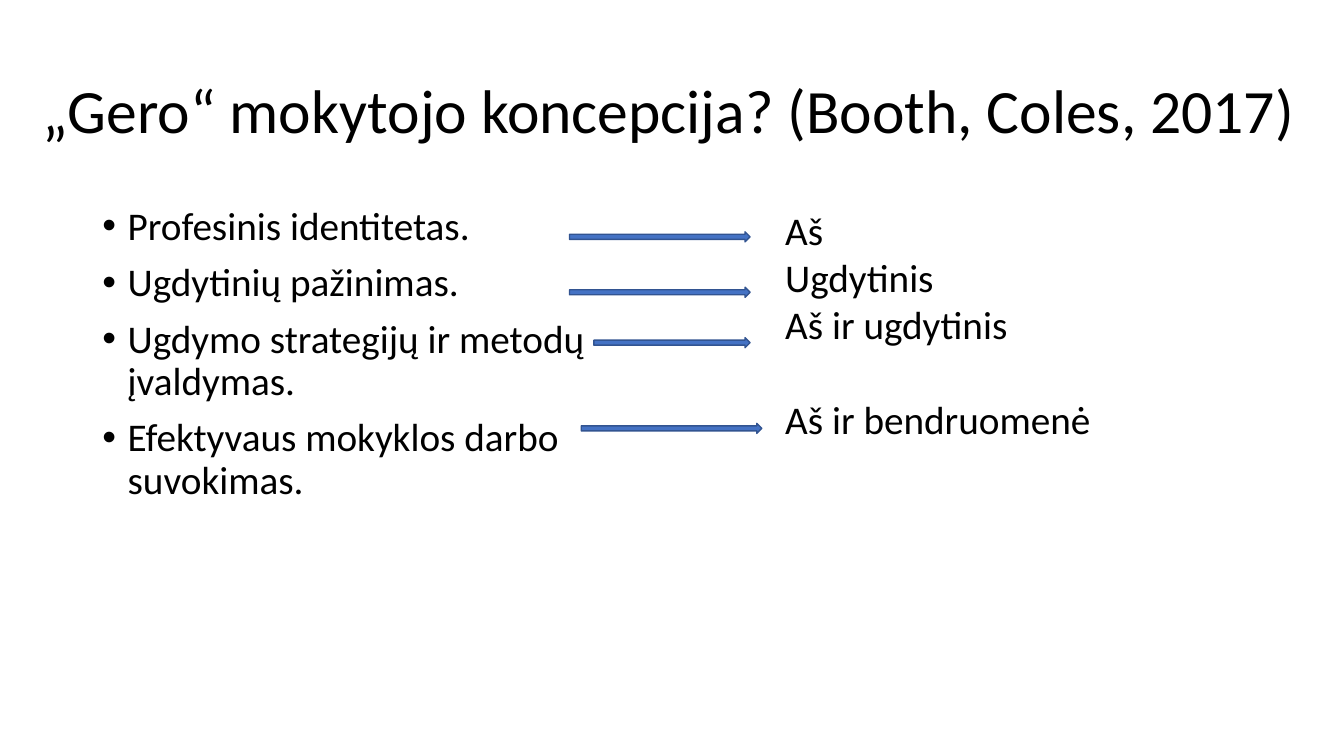
from pptx import Presentation
from pptx.dml.color import RGBColor
from pptx.enum.shapes import MSO_SHAPE
from pptx.enum.text import MSO_ANCHOR, MSO_AUTO_SIZE, PP_ALIGN
from pptx.util import Inches, Pt

BLACK = RGBColor(0, 0, 0)
BLUE = RGBColor(0x44, 0x72, 0xC4)
NAVY = RGBColor(0x32, 0x54, 0x91)

WIDTH, HEIGHT = Inches(13.33), Inches(7.5)
COLS, ROWS = 160, 90

TITLE = "„Gero“ mokytojo koncepcija? (Booth, Coles, 2017)"
SKILLS = [
    "Profesinis identitetas.",
    "Ugdytinių pažinimas.",
    "Ugdymo strategijų ir metodų įvaldymas.",
    "Efektyvaus mokyklos darbo suvokimas.",
]
ROLES = [("Aš", 0), ("Ugdytinis", 0), ("Aš ir ugdytinis", 0), ("Aš ir bendruomenė", 34)]
ARROWS = [(0, 0, 21.5), (0, 6.6, 21.5), (2.9, 12.6, 18.6), (1.4, 22.8, 21.5)]

FONT = {"name": "Calibri", "size": Pt(28)}
FRAME = {"word_wrap": True, "auto_size": MSO_AUTO_SIZE.NONE, "vertical_anchor": MSO_ANCHOR.TOP}
LIST = {"line_spacing": 0.9, "space_before": Pt(10)}


def style(item, values):
    for key, value in values.items():
        setattr(item, key, value)


def grid(box):
    left, top, width, height = box
    col, row = WIDTH / COLS, HEIGHT / ROWS
    return [round(n) for n in (left * col, top * row, width * col, height * row)]


def place(shape, box):
    style(shape, dict(zip(("left", "top", "width", "height"), grid(box))))


def write(frame, lines, form):
    style(frame, FRAME)
    for i, (text, extra) in enumerate(lines):
        para = frame.paragraphs[0] if i == 0 else frame.add_paragraph()
        para.text = text
        style(para, {**form, **extra})
        font = para.runs[0].font
        style(font, FONT)
        font.color.rgb = BLACK


def title(slide, box):
    shape = slide.shapes.title
    place(shape, box)
    write(shape.text_frame, [(TITLE, {})], {"line_spacing": 0.9, "alignment": PP_ALIGN.CENTER})
    shape.text_frame.vertical_anchor = MSO_ANCHOR.MIDDLE
    shape.text_frame.paragraphs[0].runs[0].font.size = Pt(44)


def skills(slide, box):
    shape = slide.placeholders[1]
    place(shape, box)
    write(shape.text_frame, [(text, {}) for text in SKILLS], LIST)
    for para in shape.text_frame.paragraphs:
        props = para._p.get_or_add_pPr()
        props.set("marL", str(Inches(0.25)))
        props.set("indent", str(-Inches(0.25)))


def roles(slide, box):
    shape = slide.shapes.add_textbox(*grid(box))
    write(shape.text_frame, [(text, {"space_before": Pt(gap)}) for text, gap in ROLES], {})


def arrows(slide, box):
    left, top, _, thick = box
    for x, y, width in ARROWS:
        spot = grid((left + x, top + y, width, thick))
        arrow = slide.shapes.add_shape(MSO_SHAPE.RIGHT_ARROW, *spot)
        arrow.shadow.inherit = False
        arrow.fill.solid()
        arrow.fill.fore_color.rgb = BLUE
        arrow.line.color.rgb = NAVY
        arrow.line.width = Pt(1)


def main():
    deck = Presentation()
    style(deck, {"slide_width": WIDTH, "slide_height": HEIGHT})
    slide = deck.slides.add_slide(deck.slide_layouts[1])
    title(slide, (3.7, 4.8, 152, 17.4))
    skills(slide, (11, 24, 76, 57))
    roles(slide, (92.3, 24, 58.2, 40.8))
    arrows(slide, (67.8, 27.6, 22.9, 1.2))
    deck.save("out.pptx")


if __name__ == "__main__":
    main()
